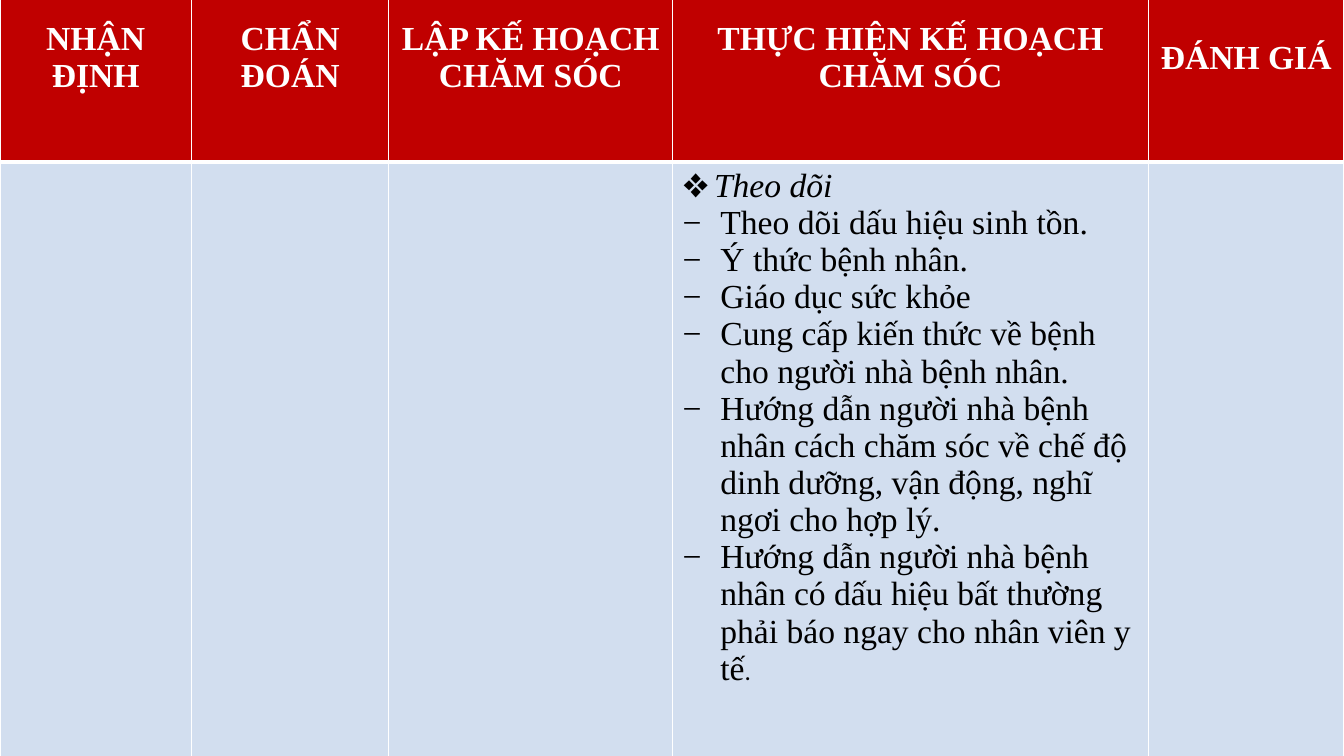
from dataclasses import dataclass

from lxml import etree
from pptx import Presentation
from pptx.dml.color import RGBColor
from pptx.enum.text import MSO_ANCHOR, PP_ALIGN
from pptx.oxml.ns import qn
from pptx.table import _Cell
from pptx.util import Cm, Pt

CENTER = PP_ALIGN.CENTER
LEFT = PP_ALIGN.LEFT
MIDDLE = MSO_ANCHOR.MIDDLE
TOP = MSO_ANCHOR.TOP

WHITE, BLACK, RED, PALE_BLUE = "FFFFFF", "000000", "C00000", "D2DEEF"
SLIDE_WIDTH, SLIDE_HEIGHT = 33.87, 19.05
TABLE_TOP = -1.17
ROW_HEIGHTS = (5.26, 16.89)
THIN, THICK = 1, 3
BASE_FORMAT = {"name": "Times New Roman", "size": Pt(24)}
HEADER_FORMAT = BASE_FORMAT | {"bold": True}
BODY_FORMAT = BASE_FORMAT | {"bold": False, "italic": False}
HEADING_FORMAT = BODY_FORMAT | {"italic": True}
PERIOD_FORMAT = BODY_FORMAT | {"name": "Calibri", "size": Pt(18)}


@dataclass(frozen=True)
class Column:
    title: str
    width: float


@dataclass(frozen=True)
class Item:
    text: str
    bullet: str = "−"
    indent: float = 0.95


COLUMNS = (
    Column("NHẬN ĐỊNH", 4.82),
    Column("CHẨN ĐOÁN", 4.98),
    Column("LẬP KẾ HOẠCH CHĂM SÓC", 7.15),
    Column("THỰC HIỆN KẾ HOẠCH CHĂM SÓC", 11.99),
    Column("ĐÁNH GIÁ", 4.93),
)
CARE_COLUMN = 3
CARE_HEADING = Item("Theo dõi", "❖", 0.79)
CARE_ITEMS = (
    Item("Theo dõi dấu hiệu sinh tồn."),
    Item("Ý thức bệnh nhân."),
    Item("Giáo dục sức khỏe"),
    Item("Cung cấp kiến thức về bệnh cho người nhà bệnh nhân."),
    Item("Hướng dẫn người nhà bệnh nhân cách chăm sóc về chế độ dinh dưỡng, "
         "vận động, nghĩ ngơi cho hợp lý."),
    Item("Hướng dẫn người nhà bệnh nhân có dấu hiệu bất thường phải báo ngay "
         "cho nhân viên y tế"),
)


def rgb(value: str) -> RGBColor:
    return RGBColor.from_string(value)


def add_run(paragraph, text: str, values: dict, color: str) -> None:
    run = paragraph.add_run()
    run.text = text
    for attribute, value in values.items():
        setattr(run.font, attribute, value)
    run.font.color.rgb = rgb(color)


def style_cell(cell: _Cell, fill: str, top: int, bottom: int) -> None:
    properties = cell._tc.get_or_add_tcPr()
    borders = {"lnL": THIN, "lnR": THIN, "lnT": top, "lnB": bottom}
    for tag, width in borders.items():
        line = etree.SubElement(properties, qn(f"a:{tag}"), w=str(Pt(width)))
        solid = etree.SubElement(line, qn("a:solidFill"))
        etree.SubElement(solid, qn("a:srgbClr"), val=WHITE)
    cell.fill.solid()
    cell.fill.fore_color.rgb = rgb(fill)


def fill_header(cell: _Cell, title: str) -> None:
    style_cell(cell, RED, THIN, THICK)
    cell.vertical_anchor = MIDDLE
    paragraph = cell.text_frame.paragraphs[0]
    paragraph.alignment = CENTER
    add_run(paragraph, title, HEADER_FORMAT, WHITE)


def add_item(paragraph, item: Item, values: dict) -> None:
    paragraph.alignment = LEFT
    properties = paragraph._p.get_or_add_pPr()
    properties.set("marL", str(Cm(item.indent)))
    properties.set("indent", str(-Cm(item.indent)))
    etree.SubElement(properties, qn("a:buFont"), typeface=BASE_FORMAT["name"])
    etree.SubElement(properties, qn("a:buChar"), char=item.bullet)
    add_run(paragraph, item.text, values, BLACK)


def fill_care_plan(cell: _Cell) -> None:
    cell.vertical_anchor = TOP
    frame = cell.text_frame
    add_item(frame.paragraphs[0], CARE_HEADING, HEADING_FORMAT)
    for item in CARE_ITEMS:
        add_item(frame.add_paragraph(), item, BODY_FORMAT)
    add_run(frame.paragraphs[-1], ".", PERIOD_FORMAT, BLACK)


def main() -> None:
    presentation = Presentation()
    presentation.slide_width = Cm(SLIDE_WIDTH)
    presentation.slide_height = Cm(SLIDE_HEIGHT)
    slide = presentation.slides.add_slide(presentation.slide_layouts[6])
    table = slide.shapes.add_table(
        len(ROW_HEIGHTS), len(COLUMNS), Cm(0), Cm(TABLE_TOP),
        Cm(SLIDE_WIDTH), Cm(sum(ROW_HEIGHTS)),
    ).table
    for row, height in zip(table.rows, ROW_HEIGHTS):
        row.height = Cm(height)
    for index, column in enumerate(COLUMNS):
        table.columns[index].width = Cm(column.width)
        fill_header(table.cell(0, index), column.title)
        style_cell(table.cell(1, index), PALE_BLUE, THICK, THIN)
    fill_care_plan(table.cell(1, CARE_COLUMN))
    presentation.save("out.pptx")


if __name__ == "__main__":
    main()
